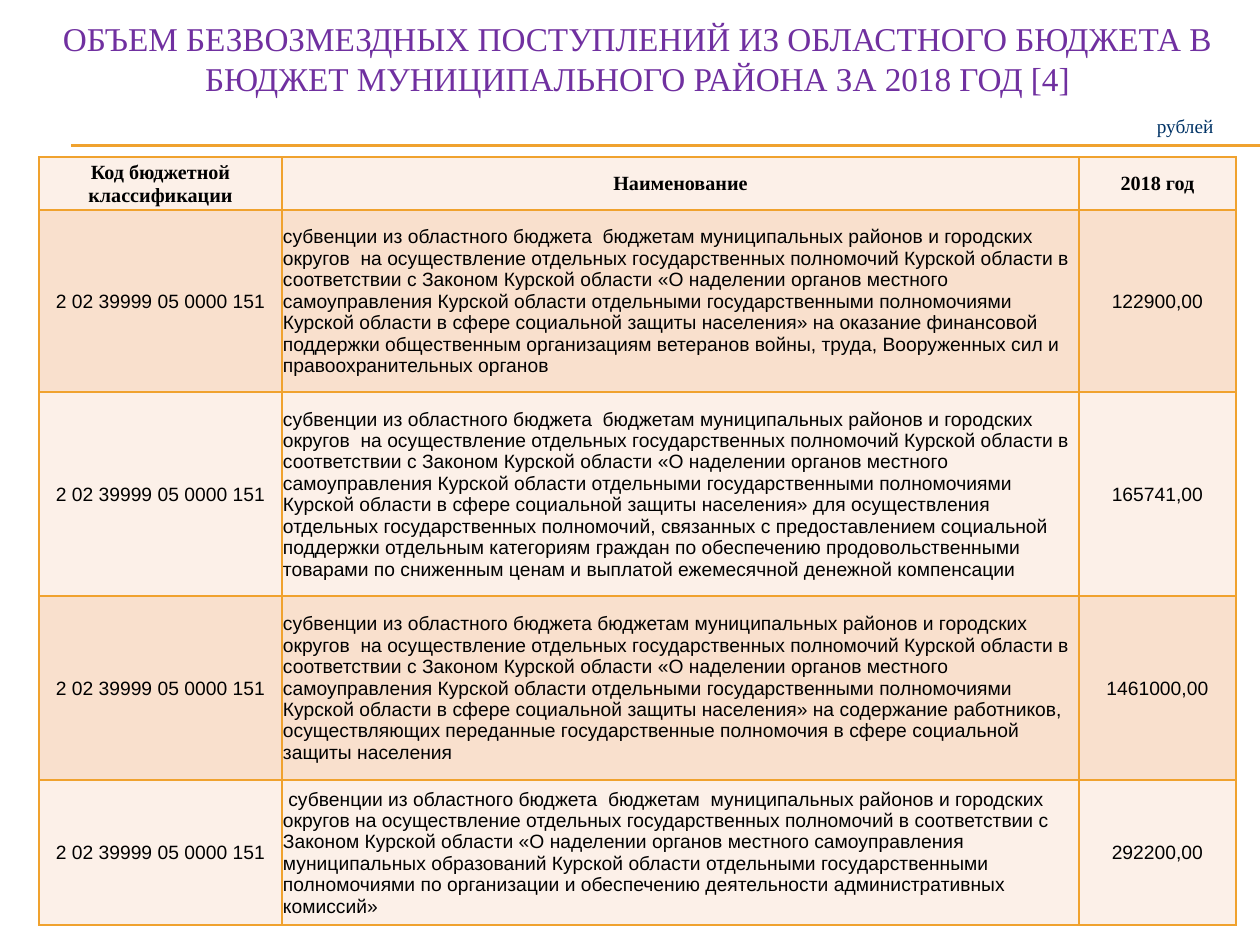
from lxml.etree import SubElement
from pptx import Presentation
from pptx.dml.color import RGBColor
from pptx.enum.shapes import MSO_CONNECTOR
from pptx.enum.text import MSO_ANCHOR, MSO_AUTO_SIZE, PP_ALIGN
from pptx.oxml.ns import qn
from pptx.util import Pt

PX = 914400 / 126
SERIF, SANS = "Times New Roman", "Arial"
ORANGE, PURPLE, NAVY, BLACK = "F0A22E", "7030A0", "003366", "000000"
BANDS = "FCF0E8", "F9E0CD"
LEFT, WIDTH = 39, 1197

# Table content
HEADERS = "Код бюджетной классификации", "Наименование", "2018 год"
CODE = "2 02 39999 05 0000 151"
SUBVENTION = "субвенции из областного бюджета"
DISTRICTS = "муниципальных районов и городских округов"
SOCIAL_LAW = (
    "на осуществление отдельных государственных полномочий Курской области "
    "в соответствии с Законом Курской области «О наделении органов местного "
    "самоуправления Курской области отдельными государственными полномочиями "
    "Курской области в сфере социальной защиты населения»"
)
GRANTS = [
    (f"{SUBVENTION}  бюджетам {DISTRICTS}  {SOCIAL_LAW} на оказание финансовой "
     "поддержки общественным организациям ветеранов войны, труда, "
     "Вооруженных сил и правоохранительных органов", "122900,00"),
    (f"{SUBVENTION}  бюджетам {DISTRICTS}  {SOCIAL_LAW} для осуществления "
     "отдельных государственных полномочий, связанных с предоставлением "
     "социальной поддержки отдельным категориям граждан по обеспечению "
     "продовольственными товарами по сниженным ценам и выплатой ежемесячной "
     "денежной компенсации", "165741,00"),
    (f"{SUBVENTION} бюджетам {DISTRICTS}  {SOCIAL_LAW} на содержание "
     "работников, осуществляющих переданные государственные полномочия в "
     "сфере социальной защиты населения", "1461000,00"),
    (f" {SUBVENTION}  бюджетам  {DISTRICTS} на осуществление отдельных "
     "государственных полномочий в соответствии с Законом Курской области "
     "«О наделении органов местного самоуправления муниципальных образований "
     "Курской области отдельными государственными полномочиями по организации "
     "и обеспечению деятельности административных комиссий»", "292200,00"),
]
COLS = 243, 797, 157
ROWS = 53, 182, 204, 184, 145


def px(n):
    return round(n * PX)


def rgb(color):
    return RGBColor.from_string(color)


def write(tf, text, size=11, font=SANS, color=BLACK, bold=False,
          align=PP_ALIGN.CENTER):
    p = tf.paragraphs[0]
    p.alignment = align
    r = p.add_run()
    r.text = text
    r.font.size, r.font.name, r.font.bold = Pt(size), font, bold
    r.font.color.rgb = rgb(color)


def add_title(s, text):
    sp = s.shapes.title
    sp.left, sp.top, sp.width, sp.height = px(LEFT), 0, px(WIDTH), px(116)
    sp.text_frame.vertical_anchor = MSO_ANCHOR.MIDDLE
    write(sp.text_frame, text, size=19, font=SERIF, color=PURPLE)


def add_rule(s, y):
    line = s.shapes.add_connector(
        MSO_CONNECTOR.STRAIGHT, px(71), px(y), px(1260), px(y))
    line.line.color.rgb = rgb(ORANGE)
    line.line.width = Pt(0.75)
    SubElement(line._element.spPr, qn("a:effectLst"))


def add_unit(s, text):
    sp = s.shapes.add_textbox(px(1143), px(108), px(83), px(37))
    tf = sp.text_frame
    tf.word_wrap = False
    tf.auto_size = MSO_AUTO_SIZE.SHAPE_TO_FIT_TEXT
    write(tf, text, font=SERIF, color=NAVY, align=PP_ALIGN.RIGHT)


def add_borders(cell):
    tc_pr = cell._tc.get_or_add_tcPr()
    for side in ("L", "R", "T", "B"):
        ln = SubElement(tc_pr, qn(f"a:ln{side}"), w=str(Pt(1)))
        fill = SubElement(ln, qn("a:solidFill"))
        SubElement(fill, qn("a:srgbClr"), val=ORANGE)


def fill_cell(cell, text, band, **fmt):
    add_borders(cell)
    cell.fill.solid()
    cell.fill.fore_color.rgb = rgb(band)
    cell.margin_left = cell.margin_right = cell.margin_top = px(1)
    cell.margin_bottom = 0
    cell.vertical_anchor = MSO_ANCHOR.MIDDLE
    write(cell.text_frame, text, **fmt)


def add_grants_table(s):
    table = s.shapes.add_table(len(ROWS), len(COLS), px(LEFT), px(157),
                               px(WIDTH), px(sum(ROWS))).table
    for col, width in zip(table.columns, COLS):
        col.width = px(width)
    for row, height in zip(table.rows, ROWS):
        row.height = px(height)

    records = [HEADERS] + [(CODE, name, amount) for name, amount in GRANTS]
    for i, record in enumerate(records):
        for j, text in enumerate(record):
            if i == 0:
                fmt = dict(size=11.5, font=SERIF, bold=True)
            else:
                fmt = dict(align=PP_ALIGN.LEFT if j == 1 else PP_ALIGN.CENTER)
            fill_cell(table.cell(i, j), text, BANDS[i % 2], **fmt)


def main():
    prs = Presentation()
    prs.slide_width, prs.slide_height = px(1260), px(945)
    s = prs.slides.add_slide(prs.slide_layouts[5])

    # Heading with its double rule
    for y in (145, 146):
        add_rule(s, y)
    add_title(s, "ОБЪЕМ БЕЗВОЗМЕЗДНЫХ ПОСТУПЛЕНИЙ ИЗ ОБЛАСТНОГО БЮДЖЕТА В "
                 "БЮДЖЕТ МУНИЦИПАЛЬНОГО РАЙОНА ЗА 2018 ГОД [4]")

    # Grants and their unit
    add_grants_table(s)
    add_unit(s, "рублей")

    prs.save("out.pptx")


if __name__ == "__main__":
    main()
